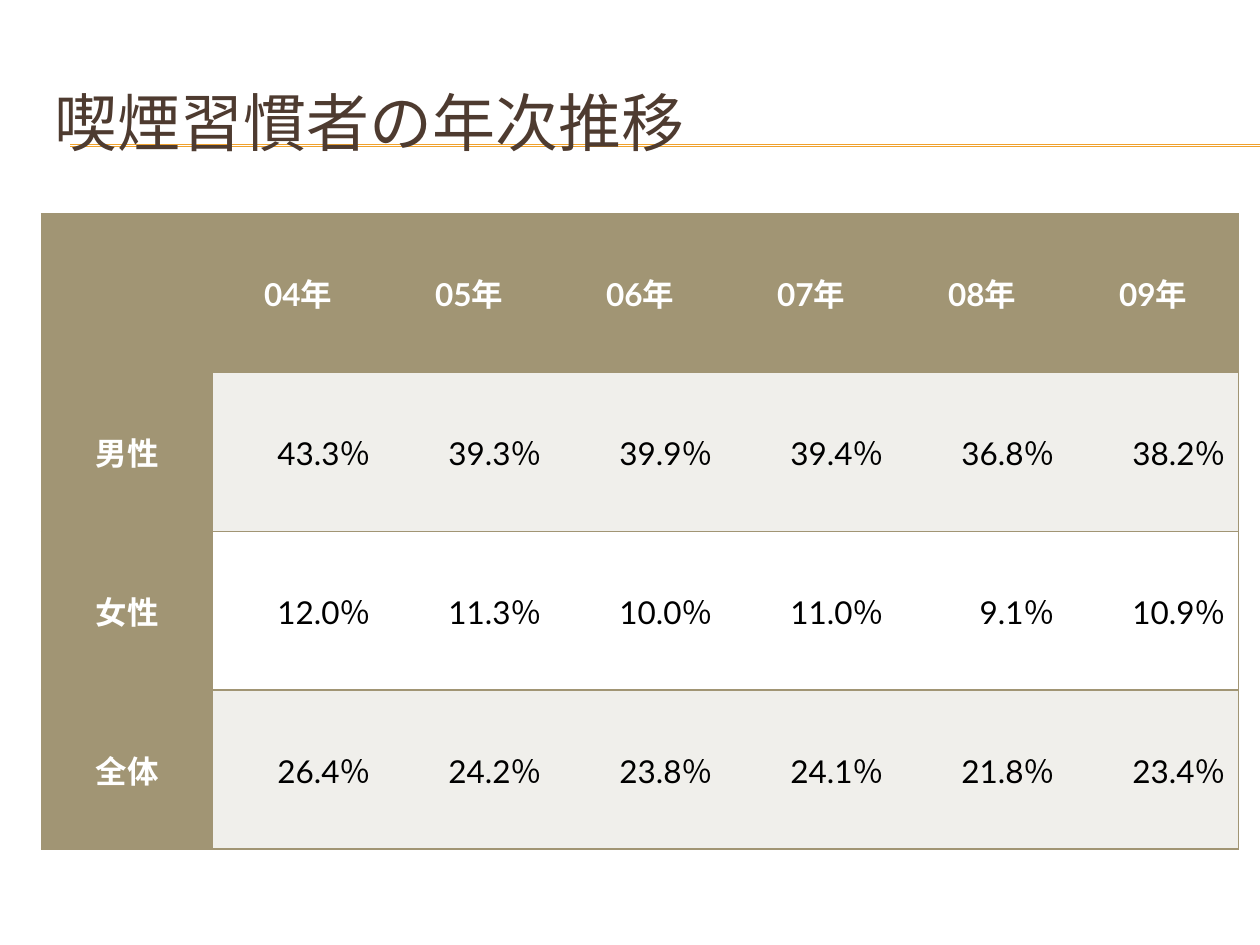
from lxml import etree
from pptx import Presentation
from pptx import util as u
from pptx.dml.color import RGBColor
from pptx.enum import shapes, text
from pptx.oxml import ns

COLORS = {
    "title": "4E3B30",
    "rule": "F0A22E",
    "head": "A19574",
    "band": "F0EFEB",
    "white": "FFFFFF",
    "black": "000000",
}
YEARS = ["04年", "05年", "06年", "07年", "08年", "09年"]
RATES = {
    "男性": ["43.3％", "39.3％", "39.9％", "39.4％", "36.8％", "38.2％"],
    "女性": ["12.0％", "11.3％", "10.0％", "11.0％", "9.1％", "10.9％"],
    "全体": ["26.4％", "24.2％", "23.8％", "24.1％", "21.8％", "23.4％"],
}


class Deck:
    font = "Lato"

    def __init__(self, width, height):
        self.prs = Presentation()
        self.prs.slide_width = u.Cm(width)
        self.prs.slide_height = u.Cm(height)
        self.s = self.prs.slides.add_slide(self.prs.slide_layouts[5])

    def color(self, name):
        return RGBColor.from_string(COLORS[name])

    def run(self, p, words, size, color, bold=False):
        r = p.add_run()
        r.text = words
        r.font.name = self.font
        r.font.size = u.Pt(size)
        r.font.bold = bold
        r.font.color.rgb = self.color(color)

    def line(self, x1, y1, x2, y2, color, width):
        c = self.s.shapes.add_connector(
            shapes.MSO_CONNECTOR.STRAIGHT, u.Cm(x1), u.Cm(y1), u.Cm(x2), u.Cm(y2))
        c.line.color.rgb = self.color(color)
        c.line.width = u.Pt(width)
        etree.SubElement(c._element.spPr, ns.qn("a:effectLst"))

    def title(self, words, x, y, w, h):
        sp = self.s.shapes.title
        sp.left, sp.top, sp.width, sp.height = u.Cm(x), u.Cm(y), u.Cm(w), u.Cm(h)
        tf = sp.text_frame
        tf.word_wrap = True
        tf.vertical_anchor = text.MSO_ANCHOR.MIDDLE
        p = tf.paragraphs[0]
        p.alignment = text.PP_ALIGN.LEFT
        self.run(p, words, 36, "title")
        sp_tree = self.s.shapes._spTree
        sp_tree.remove(sp._element)
        sp_tree.append(sp._element)

    def borders(self, cell, sides):
        tc_pr = cell._tc.get_or_add_tcPr()
        for i, side in enumerate("LRTB"):
            ln = etree.Element(ns.qn(f"a:ln{side}"), w=str(u.Pt(1)))
            if side in sides:
                fill = etree.SubElement(ln, ns.qn("a:solidFill"))
                etree.SubElement(fill, ns.qn("a:srgbClr"), val=COLORS["head"])
            else:
                etree.SubElement(ln, ns.qn("a:noFill"))
            tc_pr.insert(i, ln)

    def cell(self, cell, words, fill, color, align, bold, sides):
        cell.fill.solid()
        cell.fill.fore_color.rgb = self.color(fill)
        cell.vertical_anchor = text.MSO_ANCHOR.MIDDLE
        self.borders(cell, sides)
        if words:
            p = cell.text_frame.paragraphs[0]
            p.alignment = align
            self.run(p, words, 18, color, bold)

    def table(self, rows, x, y, w, h):
        n_rows, n_cols = len(rows), len(rows[0])
        tbl = self.s.shapes.add_table(
            n_rows, n_cols, u.Cm(x), u.Cm(y), u.Cm(w), u.Cm(h)).table
        for i, row in enumerate(rows):
            for j, words in enumerate(row):
                sides = "TB" + "L" * (j == 0) + "R" * (j == n_cols - 1)
                if i == 0 or j == 0:
                    look = ("head", "white", text.PP_ALIGN.CENTER, True)
                else:
                    fill = "band" if i % 2 else "white"
                    look = (fill, "black", text.PP_ALIGN.RIGHT, False)
                self.cell(tbl.cell(i, j), words, *look, sides)

    def save(self):
        self.prs.save("out.pptx")


def main():
    deck = Deck(25.4, 19.05)
    for y in (2.92, 2.95):
        deck.line(1.42, y, 25.4, y, "rule", 0.75)
    deck.title("喫煙習慣者の年次推移", 0.84, 1.27, 24.13, 2.34)
    rows = [["", *YEARS]] + [[group, *rates] for group, rates in RATES.items()]
    deck.table(rows, 0.84, 4.31, 24.13, 12.8)
    deck.save()


if __name__ == "__main__":
    main()
